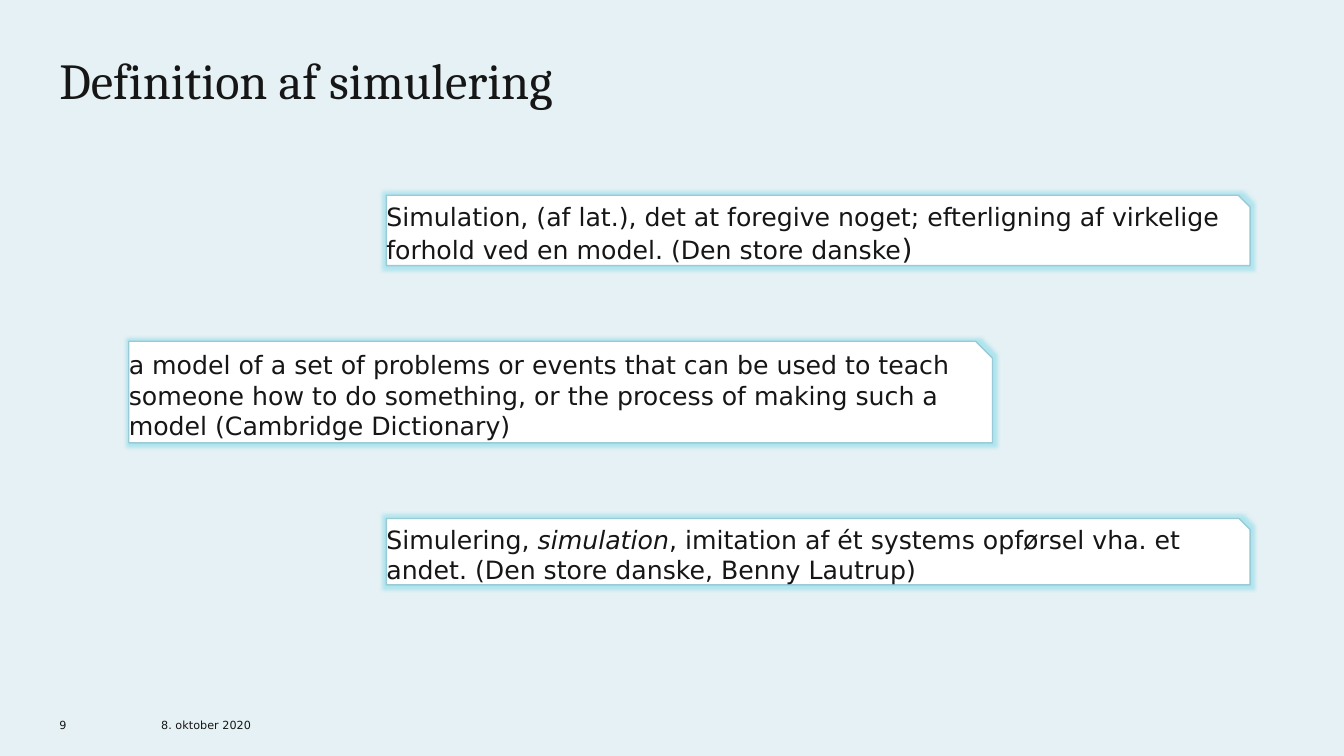
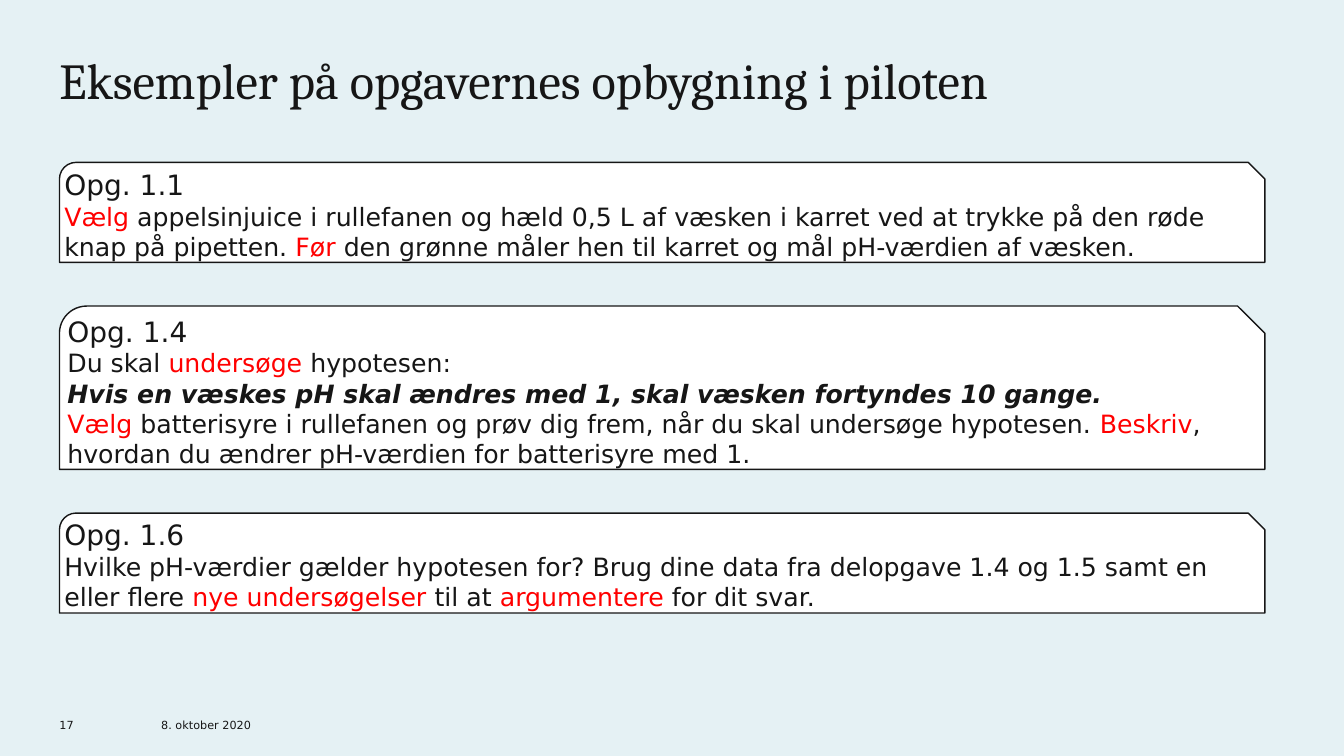
from dataclasses import dataclass

import lxml.etree
import pptx
import pptx.dml.color
import pptx.enum.shapes
import pptx.enum.text
import pptx.oxml
import pptx.oxml.ns
import pptx.util

Pt = pptx.util.Pt
RGB = pptx.dml.color.RGBColor.from_string
MSO_SHAPE = pptx.enum.shapes.MSO_SHAPE
MSO_ANCHOR = pptx.enum.text.MSO_ANCHOR
MSO_AUTO_SIZE = pptx.enum.text.MSO_AUTO_SIZE
PP_ALIGN = pptx.enum.text.PP_ALIGN


@dataclass(frozen=True)
class Theme:
    background: str = "E5F1F4"
    ink: str = "161616"
    accent: str = "FF0000"
    box: str = "FFFFFF"
    soft_line: str = "99CAD6"
    glow: str = "8CDCEA"
    title_font: str = "Cambria"
    body_font: str = "DejaVu Sans"
    title_size: int = 36
    heading_size: int = 20
    body_size: int = 18
    footer_size: int = 8
    margin: float = 42.5


theme = Theme()
DATE = "8. oktober 2020"
INDENT_LEFT, INDENT_RIGHT = 92, 276


def set_frame(tf, anchor, auto_size):
    tf.margin_left = tf.margin_top = tf.margin_right = tf.margin_bottom = 0
    tf.word_wrap = True
    tf.vertical_anchor = anchor
    tf.auto_size = auto_size


def set_paragraph(p, font, size):
    p.alignment = PP_ALIGN.LEFT
    p.font.name = font
    p.font.size = Pt(size)
    p.font.color.rgb = RGB(theme.ink)


# Each box is (left, height, paragraphs); a paragraph is (size, runs),
# and a run is (text, style), where the style names are read in the loop below.
definitions = [
    (INDENT_RIGHT, 50.2, [(theme.body_size, [
        ("Simulation, (af lat.), det at foregive noget; efterligning af virkelige "
         "forhold ved en model. (Den store danske", ""),
        (")", "large")])]),
    (INDENT_LEFT, 72.5, [(theme.body_size, [
        ("a model of a set of problems or events that can be used "
         "to teach someone how to do something, or the process of making "
         "such a model (Cambridge Dictionary)", "")])]),
    (INDENT_RIGHT, 47.4, [(theme.body_size, [
        ("Simulering, ", ""),
        ("simulation", "italic"),
        (", imitation af ét systems opførsel vha. et andet. "
         "(Den store danske, Benny Lautrup)", "")])]),
]

tasks = [
    (theme.margin, 71.4, [
        (theme.heading_size, [("Opg. 1.1", "")]),
        (theme.body_size, [
            ("Vælg", "accent"),
            (" appelsinjuice i rullefanen og hæld 0,5 L af væsken i karret ved at "
             "trykke på den røde knap på pipetten. ", ""),
            ("Før", "accent"),
            (" den grønne måler hen til karret og mål pH-værdien af væsken.", "")])]),
    (theme.margin, 116.7, [
        (theme.heading_size, [("Opg. 1.4", "")]),
        (theme.body_size, [
            ("Du skal ", ""),
            ("undersøge", "accent"),
            (" hypotesen:", ""),
            ("\n", ""),
            ("Hvis en væskes pH skal ændres med 1, skal væsken fortyndes 10 gange.",
             "bold italic"),
            ("\n", ""),
            ("Vælg", "accent"),
            (" batterisyre i rullefanen og prøv dig frem, når du skal undersøge "
             "hypotesen. ", ""),
            ("Beskriv", "accent"),
            (", hvordan du ændrer pH-værdien for batterisyre med 1.", "")])]),
    (theme.margin, 71.4, [
        (theme.heading_size, [("Opg. 1.6", "")]),
        (theme.body_size, [
            ("Hvilke pH-værdier gælder hypotesen for? Brug dine data fra delopgave "
             "1.4 og 1.5 samt en eller flere ", ""),
            ("nye undersøgelser", "accent"),
            (" til at ", ""),
            ("argumentere", "accent"),
            (" for dit svar.", "")])]),
]

slides = [
    dict(title="Definition af simulering", number="9", boxes=definitions,
         shape=MSO_SHAPE.SNIP_1_RECTANGLE, line=theme.soft_line, glow=True,
         top=139.5, width=617, gap=54.1),
    dict(title="Eksempler på opgavernes opbygning i piloten", number="17", boxes=tasks,
         shape=MSO_SHAPE.SNIP_ROUND_RECTANGLE, line=theme.ink, glow=False,
         top=116, width=861, gap=31.2),
]

prs = pptx.Presentation()
prs.slide_width, prs.slide_height = Pt(960), Pt(540)

fill = prs.slide_master.background.fill
fill.solid()
fill.fore_color.rgb = RGB(theme.background)

layout = prs.slide_layouts.get_by_name("Title Only")
sp = layout.placeholders[0]
sp.left, sp.top, sp.width, sp.height = Pt(theme.margin), Pt(42.5), Pt(729.5), Pt(73.5)
set_frame(sp.text_frame, MSO_ANCHOR.TOP, MSO_AUTO_SIZE.NONE)

for page in slides:
    s = prs.slides.add_slide(layout)
    s.shapes.title.text_frame.text = page["title"]
    p = s.shapes.title.text_frame.paragraphs[0]
    p.line_spacing = 0.83
    set_paragraph(p, theme.title_font, theme.title_size)

    for text, left, width in ((DATE, 115.2, 100), (page["number"], theme.margin, 21.6)):
        tf = s.shapes.add_textbox(Pt(left), Pt(508.3), Pt(width), Pt(14.4)).text_frame
        set_frame(tf, MSO_ANCHOR.BOTTOM, MSO_AUTO_SIZE.NONE)
        tf.text = text
        set_paragraph(tf.paragraphs[0], theme.body_font, theme.footer_size)

    top = page["top"]
    for left, height, paragraphs in page["boxes"]:
        sp = s.shapes.add_shape(page["shape"], Pt(left), Pt(top), Pt(page["width"]), Pt(height))
        top += height + page["gap"]
        sp.fill.solid()
        sp.fill.fore_color.rgb = RGB(theme.box)
        sp.line.color.rgb = RGB(page["line"])
        sp.line.width = Pt(1)
        sp.shadow.inherit = False
        if page["glow"]:
            effects = sp.element.spPr.find(pptx.oxml.ns.qn("a:effectLst"))
            glow = lxml.etree.SubElement(effects, pptx.oxml.ns.qn("a:glow"), rad=str(Pt(5)))
            color = lxml.etree.SubElement(glow, pptx.oxml.ns.qn("a:srgbClr"), val=theme.glow)
            lxml.etree.SubElement(color, pptx.oxml.ns.qn("a:alpha"), val="60000")

        tf = sp.text_frame
        set_frame(tf, MSO_ANCHOR.TOP, MSO_AUTO_SIZE.SHAPE_TO_FIT_TEXT)
        for i, (size, runs) in enumerate(paragraphs):
            p = tf.add_paragraph() if i else tf.paragraphs[0]
            set_paragraph(p, theme.body_font, size)
            for text, style in runs:
                if text == "\n":
                    p.add_line_break()
                    continue
                r = p.add_run()
                r.text = text
                if "accent" in style:
                    r.font.color.rgb = RGB(theme.accent)
                if "bold" in style:
                    r.font.bold = True
                if "italic" in style:
                    r.font.italic = True
                if "large" in style:
                    r.font.size = Pt(theme.heading_size)

prs.save("out.pptx")
